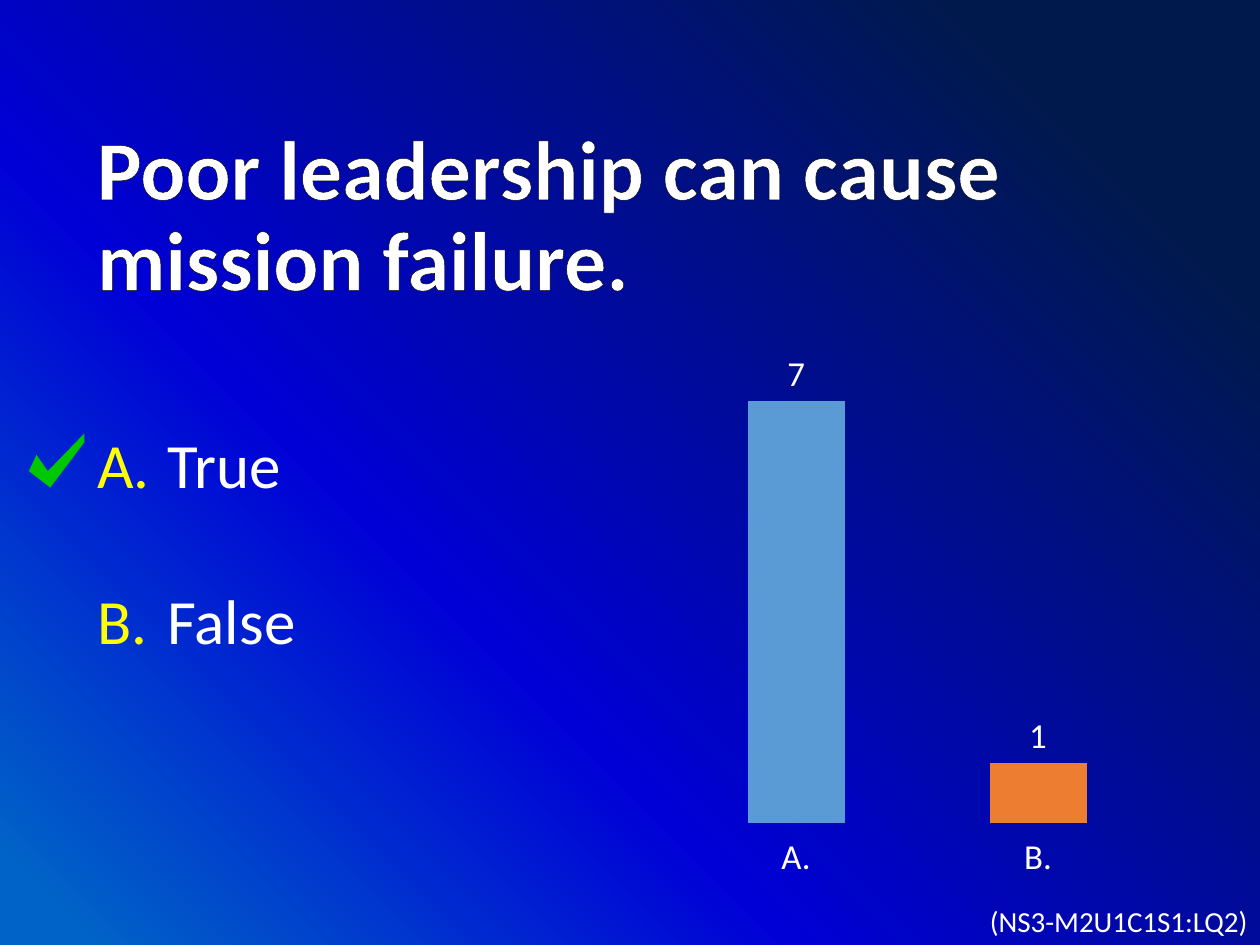
from dataclasses import dataclass

from lxml.etree import SubElement
from pptx import Presentation
from pptx.chart.data import CategoryChartData
from pptx.dml.color import RGBColor
from pptx.enum.chart import XL_CHART_TYPE, XL_LABEL_POSITION, XL_TICK_LABEL_POSITION, XL_TICK_MARK
from pptx.enum.text import MSO_ANCHOR, MSO_AUTO_SIZE, PP_ALIGN
from pptx.oxml import parse_xml
from pptx.oxml.ns import nsdecls, qn
from pptx.util import Inches, Pt


@dataclass(frozen=True)
class Theme:
    """Hold the colours and type sizes of the slide."""

    font: str = "Calibri"
    text: str = "FFFFFF"
    outline: str = "000000"
    letter: str = "FFFF00"
    check: str = "00C800"
    bars: tuple = ("5B9BD5", "ED7D31")
    gradient: tuple = ((4, "0063C7", 100), (36, "0000D6", 90), (86, "00194C", 100))
    title_size: float = 48
    answer_size: float = 36
    chart_size: float = 20
    code_size: float = 16.6


THEME = Theme()


def set_background(slide):
    """Fill the background with a gradient spreading from the lower left corner."""
    stops = "".join(
        f'<a:gs pos="{position * 1000}"><a:srgbClr val="{color}">'
        f'<a:alpha val="{alpha * 1000}"/></a:srgbClr></a:gs>'
        for position, color, alpha in THEME.gradient
    )
    background = parse_xml(
        f'<p:bg {nsdecls("p", "a")}><p:bgPr><a:gradFill rotWithShape="1">'
        f'<a:gsLst>{stops}</a:gsLst><a:path path="circle">'
        '<a:fillToRect t="100000" r="100000"/></a:path></a:gradFill>'
        "<a:effectLst/></p:bgPr></p:bg>"
    )
    slide.element.cSld.insert(0, background)


def place(shape, left, top, width, height, anchor=MSO_ANCHOR.TOP):
    """Position a placeholder and prepare its text frame."""
    shape.left, shape.top = Inches(left), Inches(top)
    shape.width, shape.height = Inches(width), Inches(height)
    frame = shape.text_frame
    frame.word_wrap = True
    frame.auto_size = MSO_AUTO_SIZE.NONE
    frame.vertical_anchor = anchor
    return frame


def write(paragraph, text, *, size, bold=False, align=PP_ALIGN.LEFT,
          line_spacing=1.0, before=0, after=0):
    """Write formatted text into a paragraph and return its run."""
    paragraph.alignment = align
    paragraph.line_spacing = line_spacing
    paragraph.space_before, paragraph.space_after = Pt(before), Pt(after)
    run = paragraph.add_run()
    run.text = text
    run.font.name = THEME.font
    run.font.size = Pt(size)
    run.font.bold = bold
    run.font.color.rgb = RGBColor.from_string(THEME.text)
    return run


def outline_text(run, color, width):
    """Draw a thin line around the letters of a run."""
    run.font._element.insert(0, parse_xml(
        f'<a:ln {nsdecls("a")} w="{Pt(width)}"><a:solidFill>'
        f'<a:srgbClr val="{color}"/></a:solidFill></a:ln>'
    ))


def set_bullet(paragraph, indent=0, lettered=False):
    """Give a paragraph a capital letter as its bullet, or no bullet."""
    properties = paragraph._p.get_or_add_pPr()
    properties.set("marL", str(Inches(indent)))
    properties.set("indent", str(-Inches(indent)))
    if lettered:
        color = SubElement(properties, qn("a:buClr"))
        SubElement(color, qn("a:srgbClr"), val=THEME.letter)
        SubElement(properties, qn("a:buFontTx"))
        SubElement(properties, qn("a:buAutoNum"), type="alphaUcPeriod")
    else:
        SubElement(properties, qn("a:buNone"))


def add_answers(frame, answers):
    """List the lettered answers."""
    for index, answer in enumerate(answers):
        paragraph = frame.add_paragraph() if index else frame.paragraphs[0]
        set_bullet(paragraph, indent=0.56, lettered=True)
        write(paragraph, answer, size=THEME.answer_size,
              before=7.2 if index else 0, after=38.4)


def add_check_mark(slide, points):
    """Draw the mark beside the correct answer."""
    corners = [(Inches(x), Inches(y)) for x, y in points]
    builder = slide.shapes.build_freeform(*corners[0])
    builder.add_line_segments(corners[1:], close=True)
    check_mark = builder.convert_to_shape()
    check_mark.shadow.inherit = False
    check_mark.fill.solid()
    check_mark.fill.fore_color.rgb = RGBColor.from_string(THEME.check)
    check_mark.line.fill.background()


def set_plot_layout(chart, **fractions):
    """Fix the outer plot area as fractions of the chart."""
    plot_area = chart._chartSpace.chart.plotArea
    for layout in plot_area.findall(qn("c:layout")):
        plot_area.remove(layout)
    modes = '<c:xMode val="edge"/><c:yMode val="edge"/>'
    values = "".join(f'<c:{key} val="{value}"/>' for key, value in fractions.items())
    plot_area.insert(0, parse_xml(
        f'<c:layout {nsdecls("c")}><c:manualLayout><c:layoutTarget val="outer"/>'
        f"{modes}{values}</c:manualLayout></c:layout>"
    ))


def add_votes_chart(slide, categories, votes):
    """Chart the number of votes for each answer."""
    data = CategoryChartData(number_format="0")
    data.categories = categories
    data.add_series("Series 1", votes)
    chart = slide.shapes.add_chart(
        XL_CHART_TYPE.COLUMN_CLUSTERED,
        Inches(5.3), Inches(2.31), Inches(3.9), Inches(5.62), data,
    ).chart
    chart.has_legend = chart.has_title = False
    chart.font.name = THEME.font
    chart.font.size = Pt(THEME.chart_size)
    chart.font.color.rgb = RGBColor.from_string(THEME.text)
    set_plot_layout(chart, x=0.01, y=0.07, w=0.99, h=0.76)

    for axis in (chart.category_axis, chart.value_axis):
        axis.has_major_gridlines = False
        axis.major_tick_mark = XL_TICK_MARK.OUTSIDE
        axis.format.line.fill.background()
    chart.value_axis.minimum_scale = 0
    chart.value_axis.maximum_scale = 8
    chart.value_axis.tick_label_position = XL_TICK_LABEL_POSITION.NONE

    plot = chart.plots[0]
    plot.gap_width = 150
    plot.vary_by_categories = False
    plot.has_data_labels = True
    labels = plot.data_labels
    labels.show_value = True
    labels.number_format, labels.number_format_is_linked = "0", False
    labels.position = XL_LABEL_POSITION.OUTSIDE_END
    for index, color in enumerate(THEME.bars):
        fill = plot.series[0].points[index].format.fill
        fill.solid()
        fill.fore_color.rgb = RGBColor.from_string(color)


def main():
    """Build and save the quiz slide."""
    presentation = Presentation()
    presentation.slide_width, presentation.slide_height = Inches(10), Inches(7.5)
    slide = presentation.slides.add_slide(presentation.slide_layouts[3])
    set_background(slide)
    title, answers, code = list(slide.placeholders)[:3]

    title_frame = place(title, 0.67, 0.38, 8.62, 2.7, MSO_ANCHOR.MIDDLE)
    question = write(title_frame.paragraphs[0], "Poor leadership can cause mission failure.",
                     size=THEME.title_size, bold=True, line_spacing=0.9)
    outline_text(question, THEME.outline, 0.25)

    add_answers(place(answers, 0.67, 3.33, 5.67, 3.67), ("True", "False"))

    code_paragraph = place(code, 7.25, 7.17, 2.75, 0.33).paragraphs[0]
    set_bullet(code_paragraph)
    write(code_paragraph, "(NS3-M2U1C1S1:LQ2)", size=THEME.code_size,
          align=PP_ALIGN.RIGHT, line_spacing=0.8)

    add_votes_chart(slide, ("A.", "B."), (7, 1))
    add_check_mark(slide, ((0.29, 3.61), (0.23, 3.74), (0.4, 3.87),
                           (0.67, 3.51), (0.67, 3.44), (0.38, 3.74)))
    presentation.save("out.pptx")


if __name__ == "__main__":
    main()
